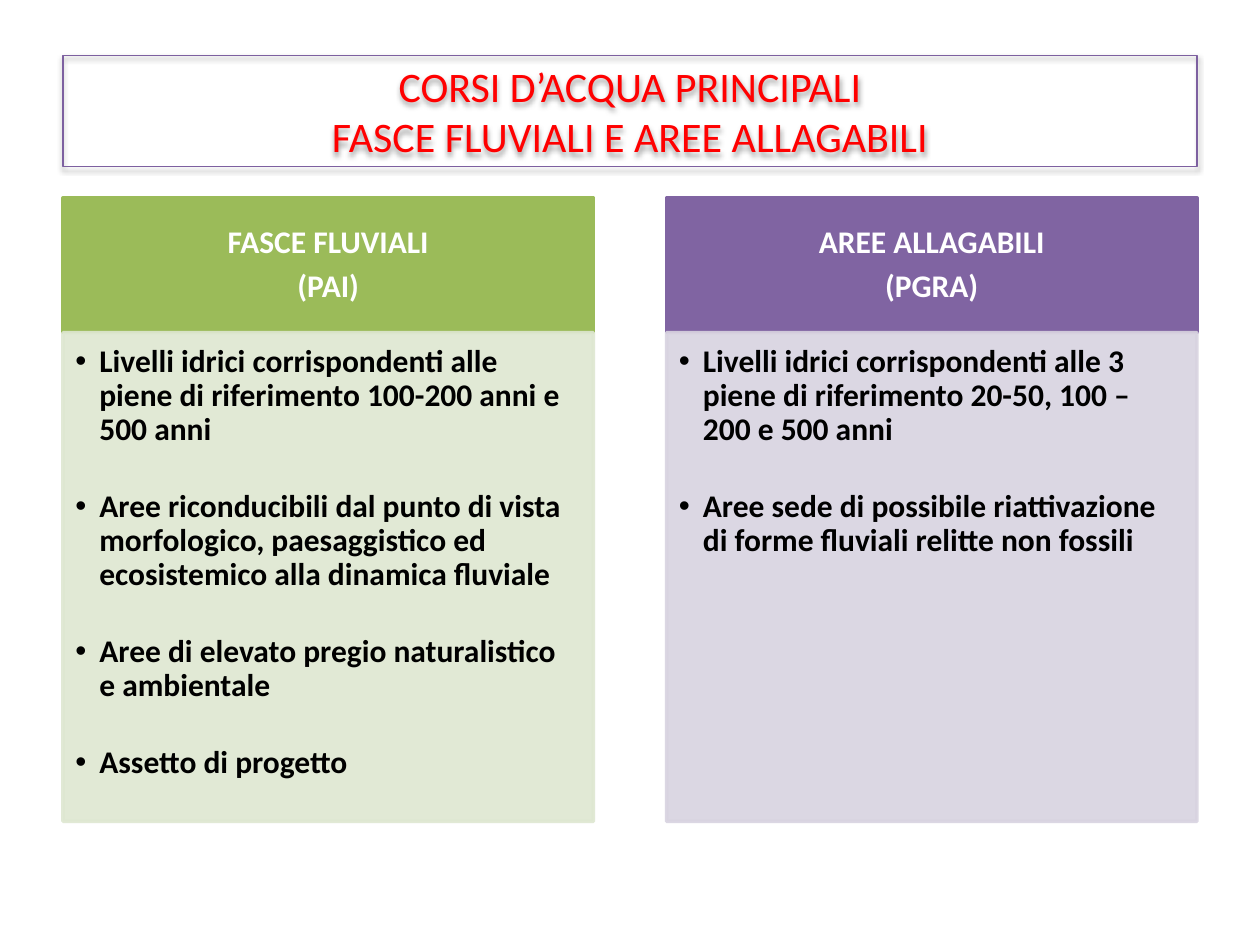
from lxml.etree import SubElement
from pptx import Presentation
from pptx.dml.color import RGBColor
from pptx.enum.shapes import MSO_SHAPE
from pptx.enum.text import MSO_ANCHOR, PP_ALIGN
from pptx.oxml.ns import qn
from pptx.util import Inches, Pt

FONT = "Calibri"
RED = RGBColor(0xFF, 0x00, 0x00)
BLACK = RGBColor(0x00, 0x00, 0x00)
WHITE = RGBColor(0xFF, 0xFF, 0xFF)
TITLE_BORDER = RGBColor(0x7D, 0x60, 0xA0)
GREEN = RGBColor(0x9B, 0xBB, 0x59)
PALE_GREEN = RGBColor(0xDE, 0xE7, 0xD1)
PURPLE = RGBColor(0x80, 0x64, 0xA2)
PALE_PURPLE = RGBColor(0xD8, 0xD3, 0xE0)

MARGIN = 0.5
CONTENT_WIDTH = 9
COLUMN_WIDTH = 4.21
COLUMN_TOP = 1.57
HEADER_HEIGHT = 1.07
BODY_HEIGHT = 3.88

COLUMNS = [
    (GREEN, PALE_GREEN, ["FASCE FLUVIALI", "(PAI)"], [
        "Livelli idrici corrispondenti alle piene di riferimento 100-200 anni e 500 anni",
        "Aree riconducibili dal punto di vista morfologico, paesaggistico ed "
        "ecosistemico alla dinamica fluviale",
        "Aree di elevato pregio naturalistico e ambientale",
        "Assetto di progetto",
    ]),
    (PURPLE, PALE_PURPLE, ["AREE ALLAGABILI", "(PGRA)"], [
        "Livelli idrici corrispondenti alle 3 piene di riferimento 20-50, 100 – 200 e 500 anni",
        "Aree sede di possibile riattivazione di forme fluviali relitte non fossili",
    ]),
]


def style_font(font, size, color, bold=False):
    font.name = FONT
    font.size = Pt(size)
    font.bold = bold
    font.color.rgb = color


def add_shadow(shape):
    effects = SubElement(shape._element.spPr, qn("a:effectLst"))
    shadow = SubElement(effects, qn("a:outerShdw"), blurRad=str(Pt(3.1)),
                        dist=str(Pt(1.6)), dir="5400000", rotWithShape="0")
    color = SubElement(shadow, qn("a:srgbClr"), val="000000")
    SubElement(color, qn("a:alpha"), val="38000")


def add_bullet(para):
    properties = para._p.get_or_add_pPr()
    properties.set("marL", str(Inches(0.19)))
    properties.set("indent", str(Inches(-0.19)))
    SubElement(properties, qn("a:buFont"), typeface="Arial")
    SubElement(properties, qn("a:buChar"), char="•")


def place_title(page, left, top, width, height):
    title = page.shapes.title
    title.left, title.top = Inches(left), Inches(top)
    title.width, title.height = Inches(width), Inches(height)
    title.fill.background()
    title.line.color.rgb = TITLE_BORDER
    title.line.width = Pt(0.75)
    add_shadow(title)
    frame = title.text_frame
    frame.text = "CORSI D’ACQUA PRINCIPALI\vFASCE FLUVIALI E AREE ALLAGABILI"
    frame.vertical_anchor = MSO_ANCHOR.MIDDLE
    para = frame.paragraphs[0]
    para.alignment = PP_ALIGN.CENTER
    style_font(para.font, 24, RED)


def add_panel(page, box, color, insets, opacity=100):
    """Add a filled rectangle with a border of the same colour."""
    panel = page.shapes.add_shape(MSO_SHAPE.RECTANGLE, *map(Inches, box))
    panel.shadow.inherit = False
    panel.fill.solid()
    panel.fill.fore_color.rgb = color
    panel.line.color.rgb = color
    panel.line.width = Pt(2)
    if opacity < 100:
        for tint in panel._element.spPr.iter(qn("a:srgbClr")):
            SubElement(tint, qn("a:alpha"), val=str(opacity * 1000))
    frame = panel.text_frame
    frame.word_wrap = True
    (frame.margin_left, frame.margin_top,
     frame.margin_right, frame.margin_bottom) = map(Inches, insets)
    return frame


def fill_text(frame, lines, color, alignment, gap, bulleted=False):
    for index, line in enumerate(lines):
        para = frame.add_paragraph() if index else frame.paragraphs[0]
        para.text = line
        para.alignment = alignment
        para.line_spacing = 0.9
        if index:
            para.space_before = Pt(gap)
        if bulleted:
            add_bullet(para)
        style_font(para.font, 18, color, bold=True)


def add_column(page, left, top, width, color, pale_color, heading, points):
    header = add_panel(page, (left, top, width, HEADER_HEIGHT), color,
                       (0.14, 0.08, 0.14, 0.08))
    header.vertical_anchor = MSO_ANCHOR.MIDDLE
    fill_text(header, heading, WHITE, PP_ALIGN.CENTER, 6)
    body = add_panel(page, (left, top + HEADER_HEIGHT, width, BODY_HEIGHT),
                     pale_color, (0.1, 0.1, 0.14, 0.16), opacity=90)
    body.vertical_anchor = MSO_ANCHOR.TOP
    fill_text(body, points, BLACK, PP_ALIGN.LEFT, 24.5, bulleted=True)


def main():
    deck = Presentation()
    deck.slide_width, deck.slide_height = Inches(10), Inches(7.5)
    page = deck.slides.add_slide(deck.slide_layouts[5])
    place_title(page, MARGIN, 0.44, CONTENT_WIDTH, 0.88)
    step = CONTENT_WIDTH - COLUMN_WIDTH
    for index, column in enumerate(COLUMNS):
        add_column(page, MARGIN + index * step, COLUMN_TOP, COLUMN_WIDTH, *column)
    deck.save("out.pptx")


if __name__ == "__main__":
    main()
